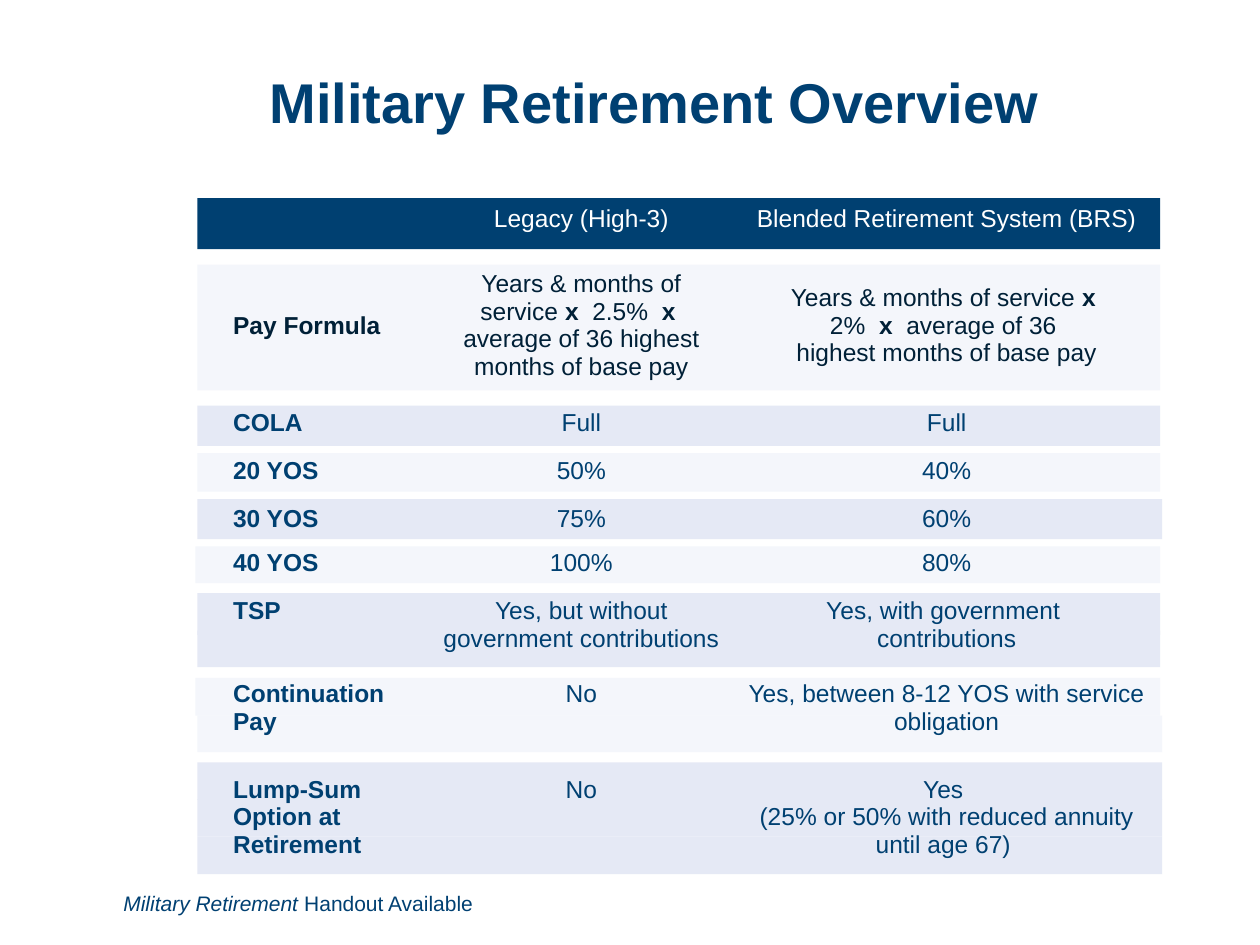
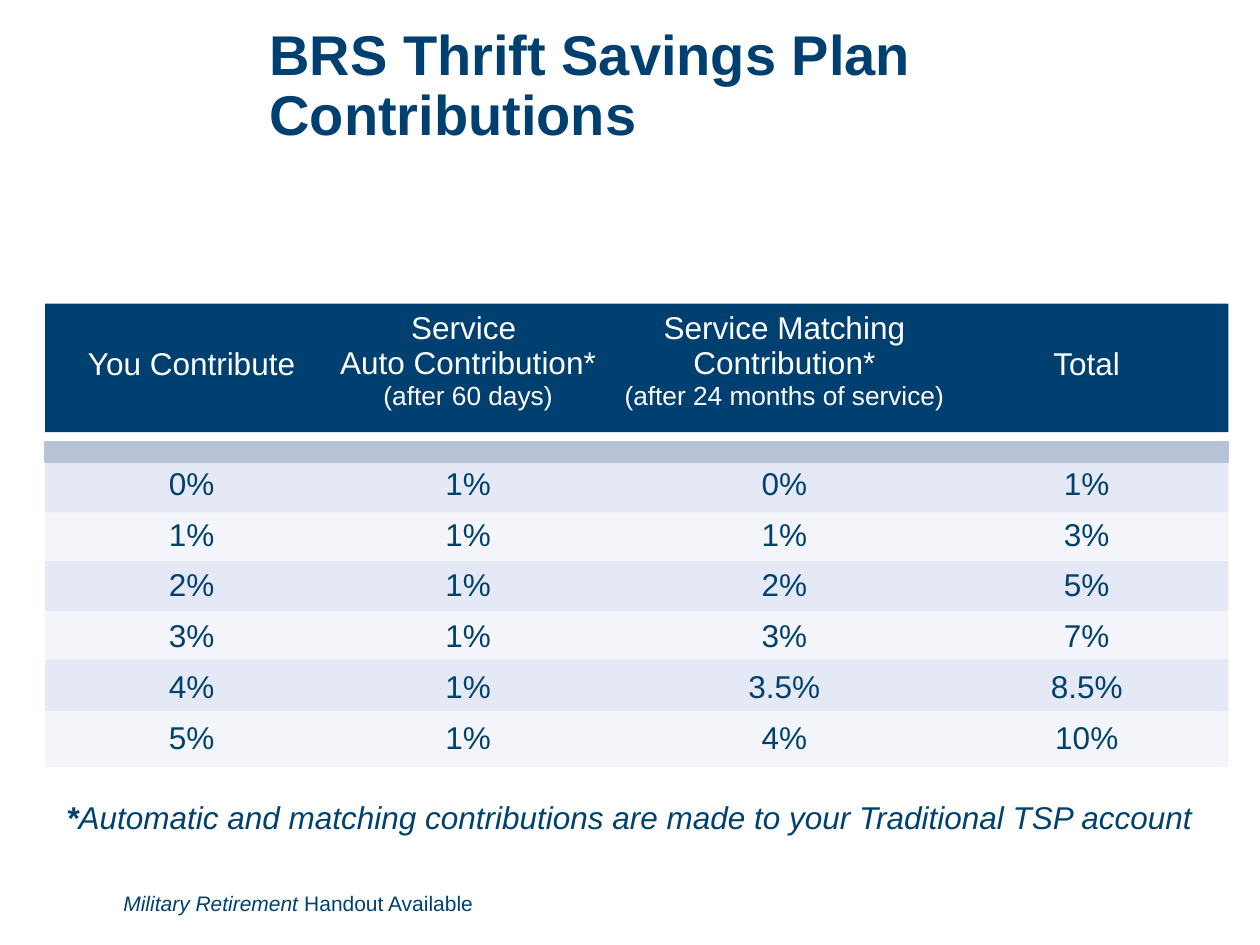
"""Build two slides on military retirement pay and savings plan contributions."""
from pptx import Presentation
from pptx.dml.color import RGBColor
from pptx.enum.shapes import MSO_SHAPE as Shape
from pptx.enum.text import MSO_ANCHOR as Anchor, PP_ALIGN as Align
from pptx.util import Pt

FONT = "Arial"
NAVY, TITLE_BLUE, INK = "004071", "004072", "002037"
NOTE_BLUE, VALUE_BLUE, WHITE = "01416E", "00416D", "FFFFFF"
PALE, LILAC, STEEL, PALE_GREY = "F4F6FB", "E5E9F5", "B7C2D6", "F4F5FA"
NO_GRID_STYLE = "{2D5ABB26-0587-4C30-8999-92F81FD0307C}"
BOLD, ITALIC, SMALL = {"bold": True}, {"italic": True}, {"size": 15}

FOOTER = [[("Military Retirement ", ITALIC), "Handout Available"]]
FOOTNOTE = [[("*", BOLD), "Automatic and matching contributions are made to your Traditional TSP account"]]

OVERVIEW_TITLE = "Military Retirement Overview"
OVERVIEW_COLUMNS = [119.5, 173.5, 244]
OVERVIEW_HEIGHTS = [30.2, 84.2, 27.4, 27.4, 27.4, 27.4, 47.5, 54.7, 64.8]
OVERVIEW_ROWS = [
    ["", "Legacy (High-3)", "Blended Retirement System (BRS)"],
    ["Pay Formula",
     [["Years & months of service ", ("x", BOLD), "  2.5%  ", ("x", BOLD),
       "  average of 36 highest months of base pay"]],
     [["Years & months of service ", ("x ", BOLD)],
      ["2%  ", ("x", BOLD), "  average of 36 "],
      ["highest months of base pay"]]],
    ["COLA", "Full", "Full"],
    ["20 YOS", "50%", "40%"],
    ["30 YOS", "75%", "60%"],
    ["40 YOS", "100%", "80%"],
    ["TSP", "Yes, but without government contributions",
     [["Yes, with government "], ["contributions"]]],
    ["Continuation Pay", "No", "Yes, between 8-12 YOS with service obligation"],
    ["Lump-Sum Option at Retirement", "No",
     [["Yes "], ["(25% or 50% with reduced annuity until age 67) "]]],
]
MIDDLE_ROWS = range(1, 5)

INNER_LEFT, OUTER_LEFT = 112.8, 111.6
INNER_RIGHT, OUTER_RIGHT = 663, 664.2
OVERVIEW_BANDS = [
    (OUTER_LEFT, INNER_RIGHT, 387.4, 21.6, PALE),
    (INNER_LEFT, OUTER_RIGHT, 409, 20.8, PALE),
    (INNER_LEFT, INNER_RIGHT, 339, 23.8, LILAC),
    (INNER_LEFT, INNER_RIGHT, 360.4, 20.9, LILAC),
    (OUTER_LEFT, INNER_RIGHT, 312.2, 21, PALE),
    (INNER_LEFT, OUTER_RIGHT, 285.3, 22.8, LILAC),
    (INNER_LEFT, INNER_RIGHT, 259, 22, PALE),
    (INNER_LEFT, INNER_RIGHT, 231.8, 23, LILAC),
    (INNER_LEFT, INNER_RIGHT, 113.2, 29.2, NAVY),
    (INNER_LEFT, INNER_RIGHT, 151.2, 71.9, PALE),
    (INNER_LEFT, OUTER_RIGHT, 435.7, 21.2, LILAC),
    (INNER_LEFT, OUTER_RIGHT, 456.7, 21.3, LILAC),
    (INNER_LEFT, OUTER_RIGHT, 478, 21.6, LILAC),
]

SAVINGS_TITLE = "BRS Thrift Savings Plan Contributions"
SAVINGS_COLUMNS = [155.5, 160.6, 200.9, 144.7]
SAVINGS_HEIGHTS = [65.5, 48.2, 28.1, 28.1, 29.5, 28.1, 28.8]
SAVINGS_ROWS = [
    ["You Contribute",
     [["Service "], ["Auto Contribution* "], [("(after 60 days)", SMALL)]],
     [["Service Matching"], ["Contribution*"], [("(after 24 months of service)", SMALL)]],
     "Total"],
    ["0%", "1%", "0%", "1%"],
    ["1%", "1%", "1%", "3%"],
    ["2%", "1%", "2%", "5%"],
    ["3%", "1%", "3%", "7%"],
    ["4%", "1%", "3.5%", "8.5%"],
    ["5%", "1%", "4%", "10%"],
]
LOWERED_MARGIN = 24.3
SAVINGS_LEFT, SAVINGS_WIDTH = 25.8, 676.2
SAVINGS_BAND_TOP = 264.3
SAVINGS_BAND_HEIGHTS = [28.7, 27.5, 28.7, 27.6, 29.6, 31.9]


def rgb(color):
    """Turn a hex string into a colour."""
    return RGBColor.from_string(color)


def write(frame, content, size=14, color=NAVY, bold=False, italic=False,
          align=Align.LEFT, spacing=None):
    """Fill a text frame from a string or from lists of runs."""
    frame.word_wrap = True
    paragraphs = [[content]] if isinstance(content, str) else content
    for index, runs in enumerate(paragraphs):
        paragraph = frame.paragraphs[0] if index == 0 else frame.add_paragraph()
        paragraph.alignment = align
        if spacing:
            paragraph.line_spacing = spacing
        for item in runs:
            text, changes = (item, {}) if isinstance(item, str) else item
            run = paragraph.add_run()
            run.text = text
            font = run.font
            font.name = FONT
            font.size = Pt(changes.get("size", size))
            font.bold = changes.get("bold", bold)
            font.italic = changes.get("italic", italic)
            font.color.rgb = rgb(color)


def add_text(slide, left, top, width, height, content, anchor=Anchor.TOP, **style):
    """Add a wrapping text box."""
    frame = slide.shapes.add_textbox(Pt(left), Pt(top), Pt(width), Pt(height)).text_frame
    frame.vertical_anchor = anchor
    write(frame, content, **style)


def add_band(slide, left, top, width, height, color, outlined=False):
    """Add a coloured strip behind a table row."""
    band = slide.shapes.add_shape(Shape.RECTANGLE, Pt(left), Pt(top), Pt(width), Pt(height))
    band.shadow.inherit = False
    band.fill.solid()
    band.fill.fore_color.rgb = rgb(color)
    if outlined:
        band.line.color.rgb = rgb(color)
        band.line.width = Pt(1)
    else:
        band.line.fill.background()


def add_clear_table(slide, left, top, columns, heights, rows, cell_style):
    """Add a table without fills or grid, styled cell by cell."""
    table = slide.shapes.add_table(len(rows), len(columns), Pt(left), Pt(top),
                                   Pt(sum(columns)), Pt(sum(heights))).table
    table.first_row = table.horz_banding = False
    table._tbl.tblPr[0].text = NO_GRID_STYLE
    for column, width in zip(table.columns, columns):
        column.width = Pt(width)
    for row_index, (row, height) in enumerate(zip(rows, heights)):
        table.rows[row_index].height = Pt(height)
        for column_index, content in enumerate(row):
            cell = table.cell(row_index, column_index)
            cell.fill.background()
            if content:
                write(cell.text_frame, content, **cell_style(cell, row_index, column_index))


def style_overview(cell, row, column):
    """Return the text format of a retirement overview cell."""
    cell.vertical_anchor = Anchor.MIDDLE if row in MIDDLE_ROWS else Anchor.TOP
    return {"color": {0: WHITE, 1: INK}.get(row, NAVY), "bold": column == 0,
            "align": Align.LEFT if column == 0 else Align.CENTER}


def style_savings(cell, row, column):
    """Return the text format of a contribution cell."""
    if row == 1 or (row == 0 and column in (0, 3)):
        cell.margin_top = Pt(LOWERED_MARGIN)
    return {"size": 18, "color": VALUE_BLUE if row else WHITE, "align": Align.CENTER}


def add_slide(presentation, title, top, width, color):
    """Add a blank slide with the shared title and footer."""
    slide = presentation.slides.add_slide(presentation.slide_layouts[6])
    add_text(slide, 146.9, top, width, 104.4, title, anchor=Anchor.MIDDLE,
             size=32, color=color, bold=True, spacing=0.9)
    add_text(slide, 63.4, 505.4, 366.5, 21.6, FOOTER, size=12, color=TITLE_BLUE)
    return slide


def build_overview(presentation):
    """Build the comparison of the two retirement systems."""
    slide = add_slide(presentation, OVERVIEW_TITLE, 7.9, 561.6, TITLE_BLUE)
    for left, right, top, height, color in OVERVIEW_BANDS:
        add_band(slide, left, top, right - left, height, color)
    add_clear_table(slide, 126, 113.8, OVERVIEW_COLUMNS, OVERVIEW_HEIGHTS,
                    OVERVIEW_ROWS, style_overview)


def build_savings(presentation):
    """Build the table of savings plan contributions."""
    slide = add_slide(presentation, SAVINGS_TITLE, -2.2, 535.7, NAVY)
    top = SAVINGS_BAND_TOP
    for index, height in enumerate(SAVINGS_BAND_HEIGHTS):
        add_band(slide, SAVINGS_LEFT, top, SAVINGS_WIDTH, height,
                 PALE_GREY if index % 2 else LILAC)
        top += height
    add_band(slide, SAVINGS_LEFT, 252.7, SAVINGS_WIDTH, 11.5, STEEL, outlined=True)
    add_band(slide, SAVINGS_LEFT, 173.5, SAVINGS_WIDTH, 73.4, NAVY)
    add_clear_table(slide, 31.7, 174.2, SAVINGS_COLUMNS, SAVINGS_HEIGHTS,
                    SAVINGS_ROWS, style_savings)
    add_text(slide, 21.6, 452.2, 676.1, 28.8, FOOTNOTE, size=18, color=NOTE_BLUE,
             italic=True, align=Align.CENTER)


def main():
    """Create and save the presentation."""
    presentation = Presentation()
    presentation.slide_width, presentation.slide_height = Pt(720), Pt(540)
    build_overview(presentation)
    build_savings(presentation)
    presentation.save("out.pptx")


if __name__ == "__main__":
    main()
